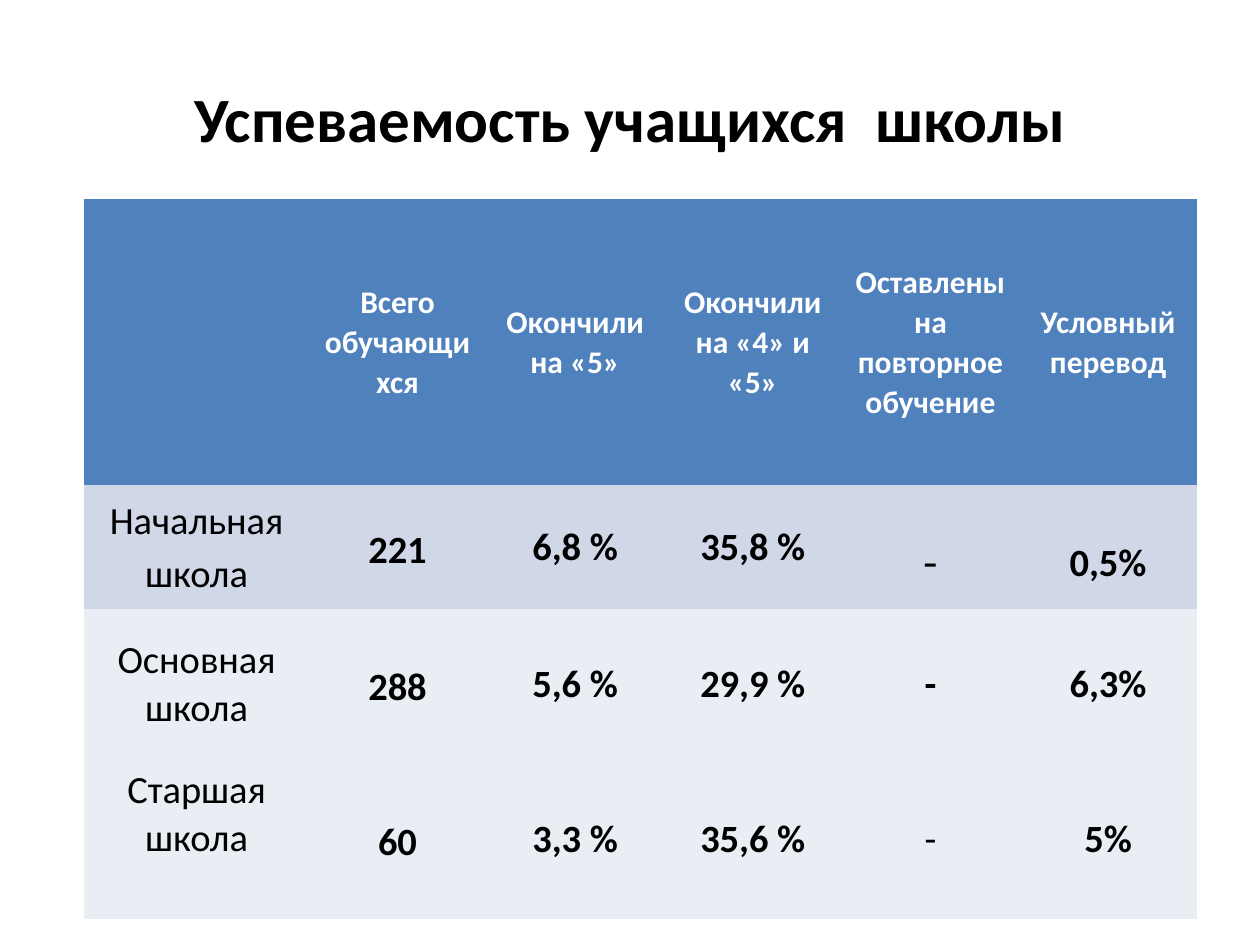
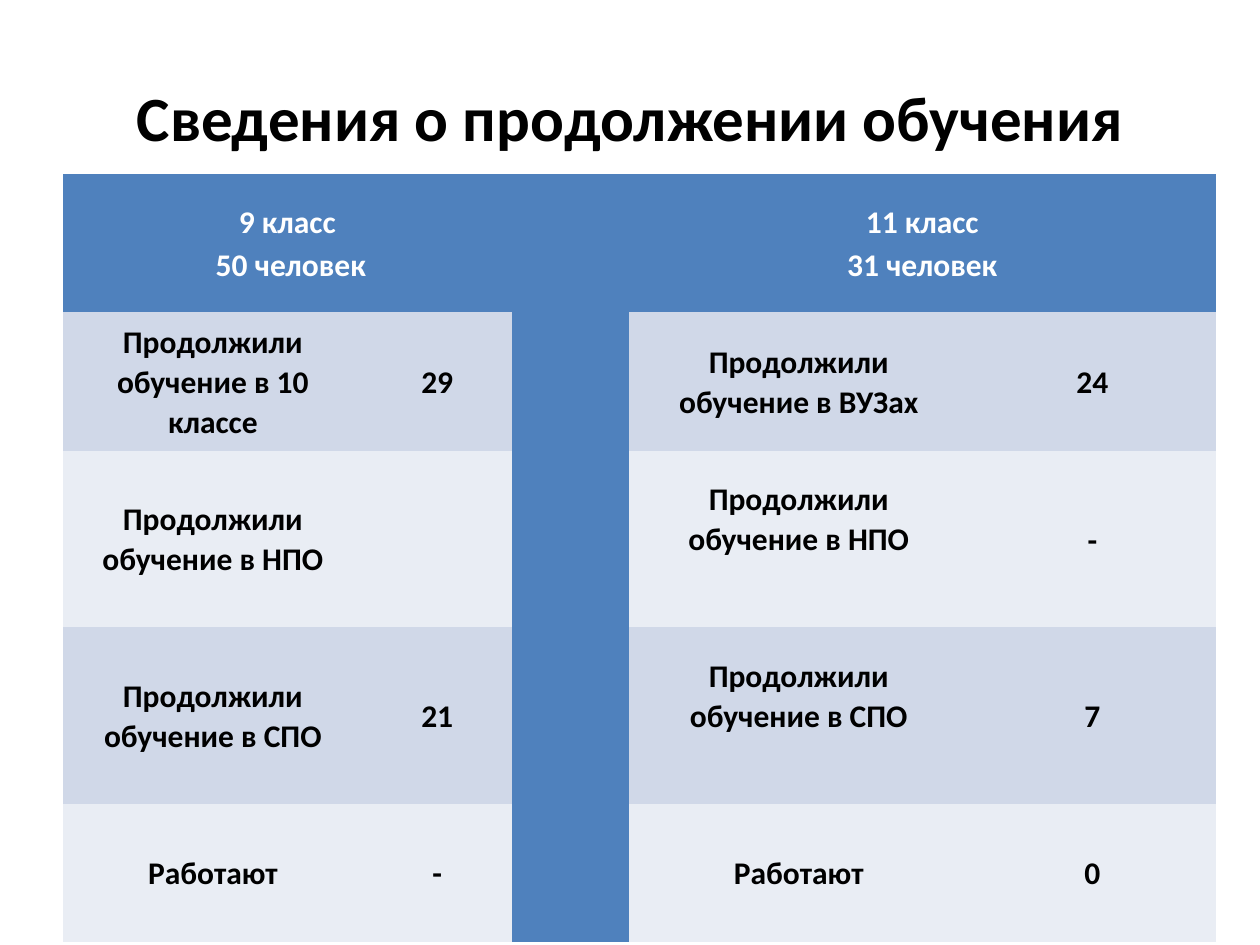
from dataclasses import dataclass, replace
from typing import Callable

from pptx import Presentation
from pptx.dml.color import RGBColor
from pptx.enum.text import MSO_ANCHOR as Anchor, MSO_AUTO_SIZE as AutoSize, PP_ALIGN as Align
from pptx.util import Inches, Pt


@dataclass(frozen=True)
class Theme:
    font: str = "Calibri"
    dash_font: str = "Times New Roman"
    ink: str = "000000"
    header_ink: str = "FFFFFF"
    header: str = "4F81BD"
    band_dark: str = "D0D8E8"
    band_light: str = "E9EDF4"
    title_size: int = 36
    body_size: int = 22
    small_size: int = 18
    dash_size: int = 24
    plain_table_style: str = "{2D5ABB26-0587-4C30-8999-92F81FD0307C}"


THEME = Theme()


@dataclass(frozen=True)
class CellStyle:
    size: int = THEME.small_size
    bold: bool = True
    color: str = THEME.ink
    font: str = THEME.font
    spacing: float = 1.04
    next_spacing: float = 1.12
    side: float = 0.1
    top: float = 0.05
    bottom: float = 0.05


StyleRule = Callable[[int, int], CellStyle]


@dataclass(frozen=True)
class TableSpec:
    """Sizes in inches; a merge is (first row, first column, last row, last column)."""
    title: str
    title_top: float
    title_height: float
    left: float
    top: float
    columns: list[float]
    rows: list[float]
    texts: list[list[str]]
    bands: list[str]
    style_for: StyleRule
    merges: tuple[tuple[int, int, int, int], ...] = ()
    divider: int | None = None


HEADER = CellStyle(color=THEME.header_ink)
RESULT = CellStyle(size=THEME.body_size)
TOTAL = replace(RESULT, spacing=1.15, side=0.07, top=0, bottom=0)
STAGE = replace(RESULT, bold=False)
LOWERED = replace(RESULT, spacing=0.74, top=0.35)
LOWERED_DASH = replace(LOWERED, size=THEME.dash_size, font=THEME.dash_font, bold=False)
PATHWAY = CellStyle()
COUNT = replace(PATHWAY, spacing=1.02, top=0.06)


def results_style(row: int, column: int) -> CellStyle:
    if row == 0:
        return HEADER
    special = {
        (1, 4): LOWERED_DASH,
        (1, 5): LOWERED,
        (3, 0): replace(STAGE, bottom=0.45),
        (3, 4): STAGE,
    }
    return special.get((row, column), {0: STAGE, 1: TOTAL}.get(column, RESULT))


def pathways_style(row: int, column: int) -> CellStyle:
    if row == 0:
        return HEADER
    if column in (1, 4):
        return COUNT
    if column == 3 and row in (2, 3):
        return replace(PATHWAY, bottom=0.37)
    return PATHWAY


RESULTS = TableSpec(
    title="Успеваемость учащихся  школы", title_top=0.28, title_height=1.3,
    left=0.67, top=1.58,
    columns=[1.78] + [1.41] * 5,
    rows=[2.27, 0.98, 1.19, 1.27],
    texts=[
        ["", "Всего обучающихся", "Окончили на «5»", "Окончили на «4» и «5»",
         "Оставлены на повторное обучение", "Условный перевод"],
        ["Начальная\nшкола", "221", "6,8 %", "35,8 %", "-", "0,5%"],
        ["Основная школа", "288", "5,6 %", "29,9 %", "-", "6,3%"],
        ["Старшая школа", "60", "3,3 %", "35,6 %", "-", "5%"],
    ],
    bands=[THEME.header, THEME.band_dark, THEME.band_light, THEME.band_light],
    style_for=results_style,
)

PATHWAYS = TableSpec(
    title="Сведения о продолжении обучения", title_top=0.3, title_height=1.25,
    left=0.5, top=1.38,
    columns=[2.38, 1.18, 0.93, 2.7, 1.96],
    rows=[1.1, 1.1, 1.4, 1.4, 1.1],
    texts=[
        ["9 класс\n 50 человек", "", "", "11 класс\n31 человек", ""],
        ["Продолжили обучение в 10 классе", "29", "", "Продолжили обучение в ВУЗах", "24"],
        ["Продолжили обучение в НПО", "", "", "Продолжили обучение в НПО", "-"],
        ["Продолжили обучение в СПО", "21", "", "Продолжили обучение в СПО", "7"],
        ["Работают", "-", "", "Работают", "0"],
    ],
    bands=[THEME.header] + [THEME.band_dark, THEME.band_light] * 2,
    style_for=pathways_style,
    merges=((0, 0, 0, 1), (0, 2, 4, 2), (0, 3, 0, 4)),
    divider=2,
)


def apply(target, **values) -> None:
    for name, value in values.items():
        setattr(target, name, value)


def format_font(font, name: str, size: int, bold: bool, color: str) -> None:
    apply(font, name=name, size=Pt(size), bold=bold)
    font.color.rgb = RGBColor.from_string(color)


def set_title(page, spec: TableSpec) -> None:
    title = page.shapes.title
    apply(title, left=Inches(0.5), top=Inches(spec.title_top),
          width=Inches(9), height=Inches(spec.title_height))
    frame = title.text_frame
    frame.text = spec.title
    apply(frame, vertical_anchor=Anchor.MIDDLE, word_wrap=True, auto_size=AutoSize.NONE)
    para = frame.paragraphs[0]
    para.alignment = Align.CENTER
    format_font(para.runs[0].font, THEME.font, THEME.title_size, True, THEME.ink)


def fill_cell(cell, text: str, fill: str, style: CellStyle) -> None:
    cell.fill.solid()
    cell.fill.fore_color.rgb = RGBColor.from_string(fill)
    apply(cell, vertical_anchor=Anchor.MIDDLE,
          margin_left=Inches(style.side), margin_right=Inches(style.side),
          margin_top=Inches(style.top), margin_bottom=Inches(style.bottom))
    if not text:
        return
    cell.text_frame.text = text
    for index, para in enumerate(cell.text_frame.paragraphs):
        apply(para, alignment=Align.CENTER,
              line_spacing=style.next_spacing if index else style.spacing)
        for span in para.runs:
            format_font(span.font, style.font, style.size, style.bold, style.color)


def add_grid(page, spec: TableSpec) -> None:
    frame = page.shapes.add_table(
        len(spec.rows), len(spec.columns), Inches(spec.left), Inches(spec.top),
        Inches(sum(spec.columns)), Inches(sum(spec.rows)))
    table = frame.table
    apply(table, first_row=False, horz_banding=False)
    table._tbl.tblPr[0].text = THEME.plain_table_style
    for column, width in zip(table.columns, spec.columns):
        column.width = Inches(width)
    for row, height in zip(table.rows, spec.rows):
        row.height = Inches(height)
    for row, (texts, band) in enumerate(zip(spec.texts, spec.bands)):
        for column, text in enumerate(texts):
            fill = THEME.header if column == spec.divider else band
            fill_cell(table.cell(row, column), text, fill, spec.style_for(row, column))
    for first_row, first_column, last_row, last_column in spec.merges:
        table.cell(first_row, first_column).merge(table.cell(last_row, last_column))


def main() -> None:
    deck = Presentation()
    apply(deck, slide_width=Inches(10), slide_height=Inches(7.5))
    title_only = deck.slide_layouts.get_by_name("Title Only")
    for spec in (RESULTS, PATHWAYS):
        page = deck.slides.add_slide(title_only)
        set_title(page, spec)
        add_grid(page, spec)
    deck.save("out.pptx")


if __name__ == "__main__":
    main()
